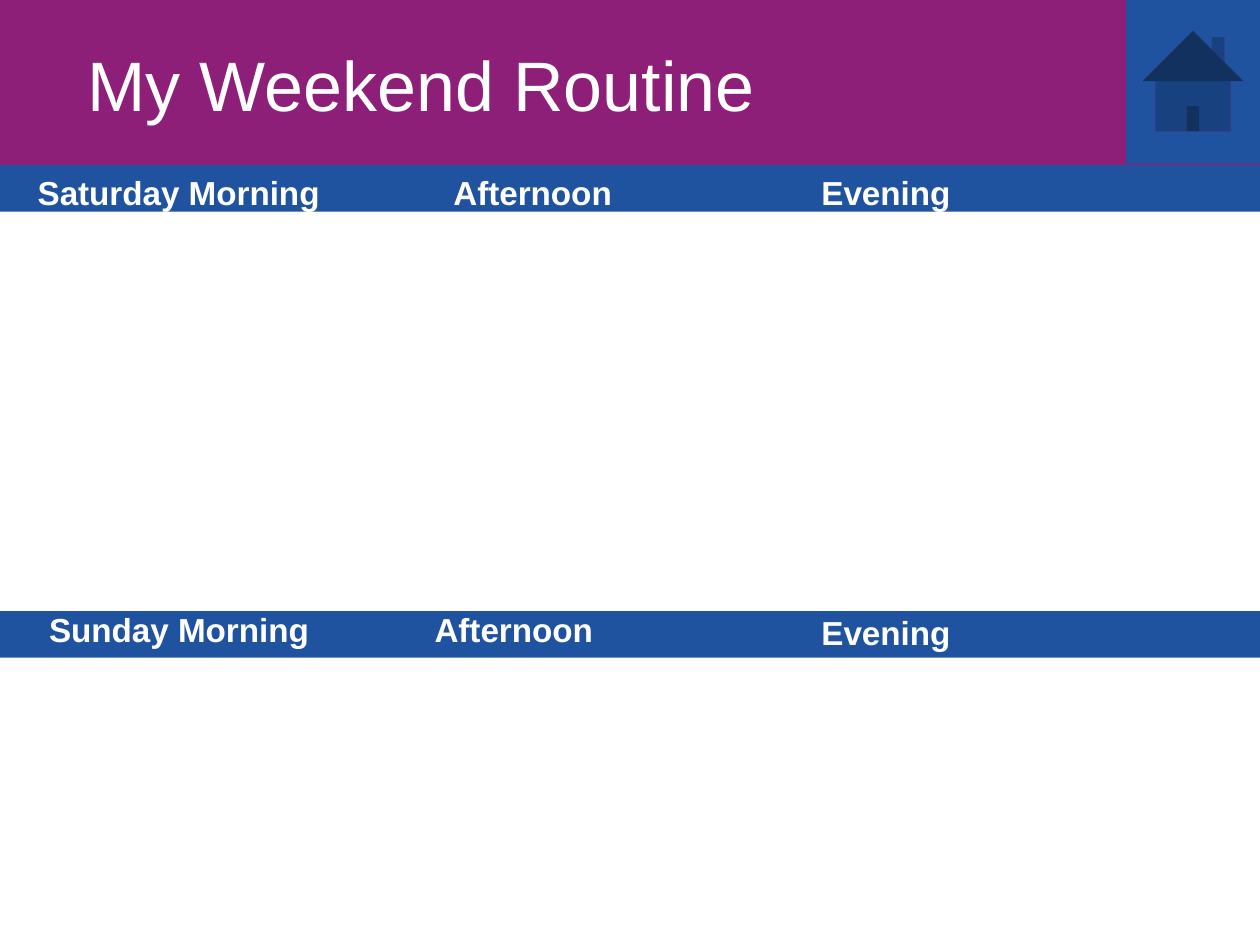
from lxml import etree
from pptx import Presentation
from pptx.dml.color import RGBColor
from pptx.enum.shapes import MSO_SHAPE as Shape
from pptx.enum.text import MSO_ANCHOR as Anchor, PP_ALIGN as Align
from pptx.oxml.ns import qn
from pptx.util import Cm, Pt

COLORS = {"header": "8E1F78", "band": "1F539F", "text": "FFFFFF", "shadow": "000000"}
WIDTH, HEIGHT = 25.4, 19.05
BAND_WIDTH, BAND_HEIGHT = 25.45, 0.94
DAYS = [
    (3.33, [
        ("Saturday Morning", 0.51, 3.35, 8.0, 8.38),
        ("Afternoon", 8.89, 3.35, 6.81, 8.38),
        ("Evening", 16.31, 3.35, 8.41, 8.38),
    ]),
    (12.32, [
        ("Sunday Morning", 0.74, 12.16, 7.8, 11.63),
        ("Afternoon", 8.51, 12.16, 6.81, 8.38),
        ("Evening", 16.31, 12.21, 8.41, 8.38),
    ]),
]


class RoutineSlide:
    """Holds the style and the current slide, and adds each kind of element."""

    def __init__(self, presentation, font="Arial"):
        self.font = font
        self.slide = presentation.slides.add_slide(presentation.slide_layouts[5])

    def add_text(self, frame, text, size, bold=False):
        paragraph = frame.paragraphs[0]
        paragraph.alignment = Align.LEFT
        run = paragraph.add_run()
        run.text = text
        run.font.name = self.font
        run.font.size = Pt(size)
        run.font.bold = bold
        run.font.color.rgb = RGBColor.from_string(COLORS["text"])

    def block(self, kind, color, left, top, width, height):
        shape = self.slide.shapes.add_shape(kind, Cm(left), Cm(top), Cm(width), Cm(height))
        shape.shadow.inherit = False
        shape.fill.solid()
        shape.fill.fore_color.rgb = RGBColor.from_string(COLORS[color])
        shape.line.fill.background()
        return shape

    def header(self, left, top, width, height):
        shape = self.block(Shape.RECTANGLE, "header", left, top, width, height)
        effects = shape._element.spPr.find(qn("a:effectLst"))
        shadow = etree.SubElement(effects, qn("a:outerShdw"), blurRad=str(Pt(3.1)),
                                  dist=str(Pt(1.8)), dir="5400000", rotWithShape="0")
        color = etree.SubElement(shadow, qn("a:srgbClr"), val=COLORS["shadow"])
        etree.SubElement(color, qn("a:alpha"), val="35000")
        self.slide.shapes.title._element.addprevious(shape._element)

    def title(self, text, left, top, width, height):
        title = self.slide.shapes.title
        title.left, title.top, title.width, title.height = map(Cm, (left, top, width, height))
        title.text_frame.vertical_anchor = Anchor.BOTTOM
        self.add_text(title.text_frame, text, 40)

    def label(self, text, left, top, width, height):
        box = self.slide.shapes.add_textbox(Cm(left), Cm(top), Cm(width), Cm(height))
        box.text_frame.word_wrap = True
        self.add_text(box.text_frame, text, 19, bold=True)


def main():
    presentation = Presentation()
    presentation.slide_width, presentation.slide_height = Cm(WIDTH), Cm(HEIGHT)
    routine = RoutineSlide(presentation)
    routine.header(0, -0.05, BAND_WIDTH, 3.38)
    routine.title("My Weekend Routine", 1.5, 0.69, 22.71, 1.96)
    for band_top, labels in DAYS:
        routine.block(Shape.RECTANGLE, "band", 0, band_top, BAND_WIDTH, BAND_HEIGHT)
        for label in labels:
            routine.label(*label)
    routine.block(Shape.ACTION_BUTTON_HOME, "band", 22.7, -0.03, 2.7, 3.33)
    presentation.save("out.pptx")


if __name__ == "__main__":
    main()
